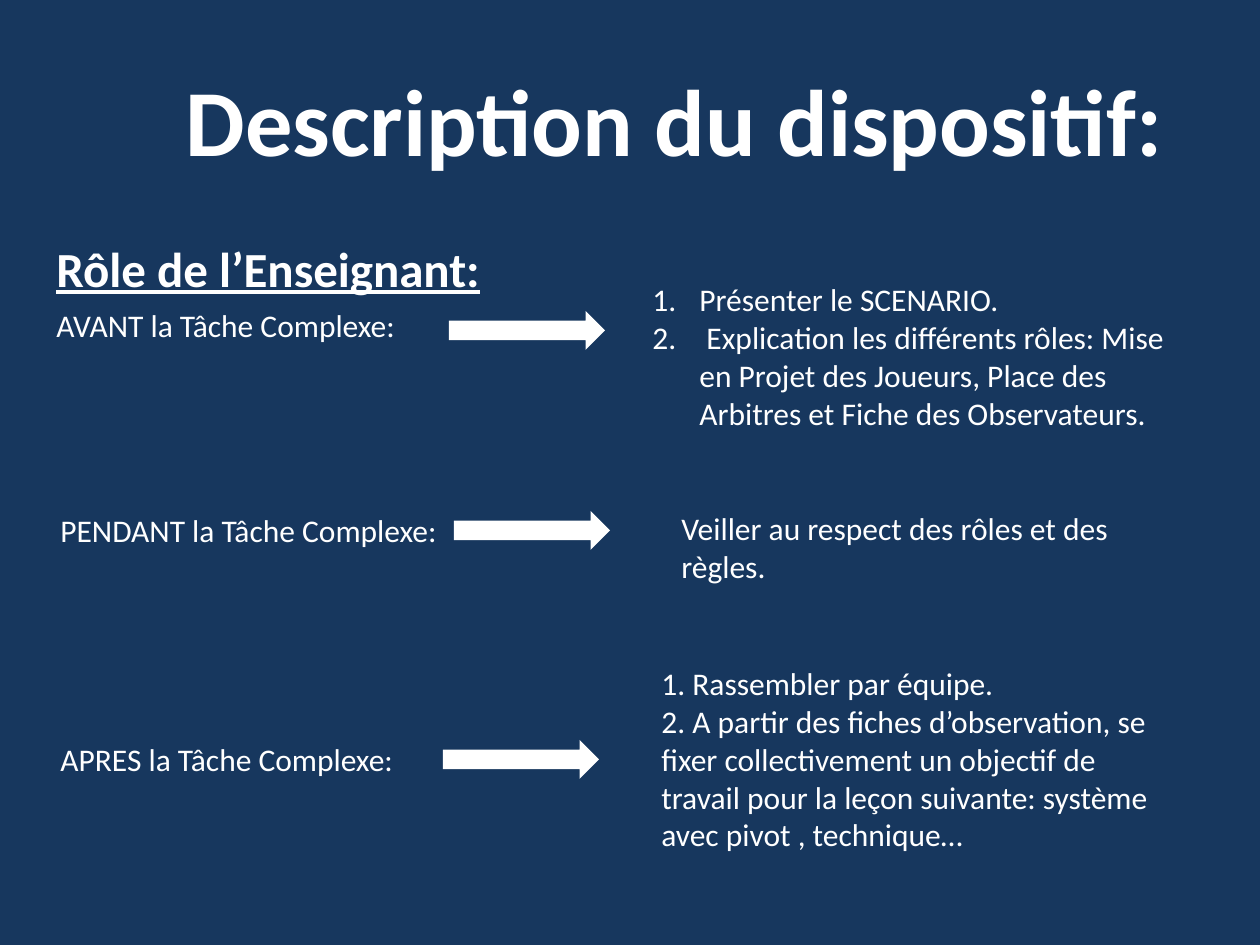
from lxml.etree import SubElement
from pptx import Presentation
from pptx.dml.color import RGBColor
from pptx.enum.shapes import MSO_SHAPE
from pptx.enum.text import MSO_ANCHOR, PP_ALIGN
from pptx.oxml.ns import qn
from pptx.util import Emu, Pt

NAVY = RGBColor(0x17, 0x37, 0x5E)
WHITE = RGBColor(0xFF, 0xFF, 0xFF)
FONT = "Calibri"
PX_PER_INCH = 126
NUMBER_INDENT = 47
ARROW_SIZE = (156, 39)

# Each phase: label, label box, arrow corner, tasks, tasks box, numbered
PHASES = [
    ("AVANT la Tâche Complexe:", (44, 300, 368, 50), (449, 311),
     ["Présenter le SCENARIO.",
      " Explication les différents rôles: Mise en Projet des Joueurs, "
      "Place des Arbitres et Fiche des Observateurs."],
     (640, 274, 537, 204), True),
    ("PENDANT la Tâche Complexe:", (48, 505, 406, 50), (454, 511),
     ["Veiller au respect des rôles et des règles."],
     (669, 503, 525, 89), False),
    ("APRES la Tâche Complexe:", (48, 734, 362, 50), (443, 740),
     ["1. Rassembler par équipe.",
      "2. A partir des fiches d’observation, se fixer collectivement un objectif "
      "de travail pour la leçon suivante: système avec pivot , technique…"],
     (649, 658, 528, 204), False),
]


def px(length):
    return Emu(round(length * 914400 / PX_PER_INCH))


def number_paragraph(paragraph):
    properties = paragraph._p.get_or_add_pPr()
    properties.set("marL", str(px(NUMBER_INDENT)))
    properties.set("indent", str(-px(NUMBER_INDENT)))
    SubElement(properties, qn("a:buFont"), typeface="+mj-lt")
    SubElement(properties, qn("a:buAutoNum"), type="arabicPeriod")


def add_text(slide, lines, box, size=18, bold=False, underline=False,
             wrap=True, numbered=False):
    frame = slide.shapes.add_textbox(*map(px, box)).text_frame
    frame.word_wrap = wrap
    frame.text = "\n".join(lines)
    for paragraph in frame.paragraphs:
        if numbered:
            number_paragraph(paragraph)
        for run in paragraph.runs:
            font = run.font
            font.name = FONT
            font.size = Pt(size)
            font.bold = bold
            font.underline = underline
            font.color.rgb = WHITE
    return frame


def add_arrow(slide, corner):
    arrow = slide.shapes.add_shape(MSO_SHAPE.RIGHT_ARROW,
                                   *map(px, corner + ARROW_SIZE))
    arrow.shadow.inherit = False
    arrow.fill.solid()
    arrow.fill.fore_color.rgb = WHITE
    arrow.line.fill.background()


def add_phase(slide, label, label_box, arrow_corner, tasks, tasks_box, numbered):
    add_text(slide, [label], label_box, wrap=False)
    add_arrow(slide, arrow_corner)
    add_text(slide, tasks, tasks_box, numbered=numbered)


def main():
    presentation = Presentation()
    presentation.slide_width = px(1260)
    presentation.slide_height = px(945)
    slide = presentation.slides.add_slide(presentation.slide_layouts[6])
    slide.background.fill.solid()
    slide.background.fill.fore_color.rgb = NAVY

    title = add_text(slide, ["Description du dispositif:"],
                     (113, 40, 1123, 158), size=54, bold=True)
    title.vertical_anchor = MSO_ANCHOR.MIDDLE
    title.paragraphs[0].alignment = PP_ALIGN.CENTER

    add_text(slide, ["Rôle de l’Enseignant:"], (44, 232, 1171, 70),
             size=28, bold=True, underline=True)
    for phase in PHASES:
        add_phase(slide, *phase)

    presentation.save("out.pptx")


if __name__ == "__main__":
    main()
